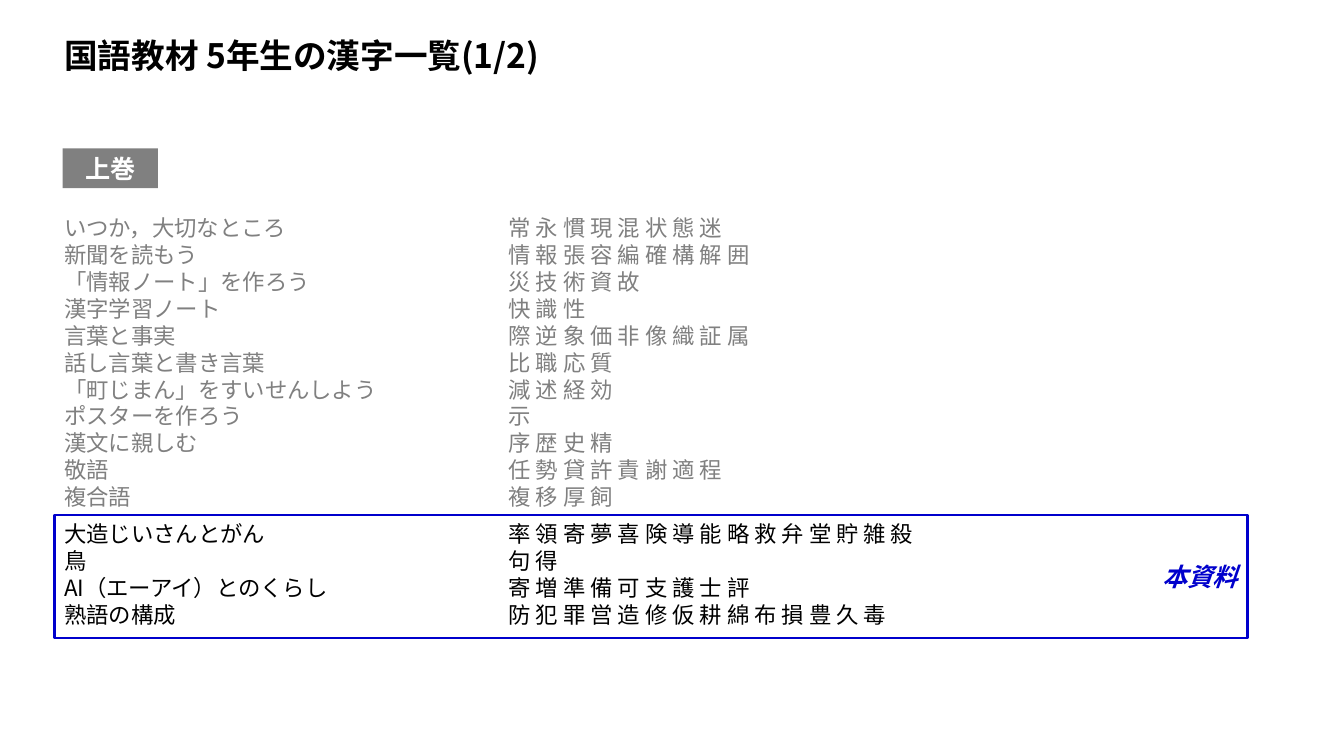
from lxml.etree import SubElement
from pptx import Presentation
from pptx.dml.color import RGBColor
from pptx.enum.shapes import MSO_SHAPE
from pptx.enum.text import MSO_ANCHOR, PP_ALIGN
from pptx.oxml.ns import qn
from pptx.util import Cm, Pt

GRAY = RGBColor(0x80, 0x80, 0x80)
BLACK = RGBColor(0, 0, 0)
WHITE = RGBColor(255, 255, 255)
BLUE = RGBColor(0, 0, 0xCC)

EARLIER_UNITS = [
    ("いつか，大切なところ", "常永慣現混状態迷"),
    ("新聞を読もう", "情報張容編確構解囲"),
    ("「情報ノート」を作ろう", "災技術資故"),
    ("漢字学習ノート", "快識性"),
    ("言葉と事実", "際逆象価非像織証属"),
    ("話し言葉と書き言葉", "比職応質"),
    ("「町じまん」をすいせんしよう", "減述経効"),
    ("ポスターを作ろう", "示"),
    ("漢文に親しむ", "序歴史精"),
    ("敬語", "任勢貸許責謝適程"),
    ("複合語", "複移厚飼"),
]
CURRENT_UNITS = [
    ("大造じいさんとがん", "率領寄夢喜険導能略救弁堂貯雑殺"),
    ("鳥", "句得"),
    ("AI（エーアイ）とのくらし", "寄増準備可支護士評"),
    ("熟語の構成", "防犯罪営造修仮耕綿布損豊久毒"),
]


def write_text(para, text, font="Noto Sans CJK JP", size=16, color=BLACK, bold=False,
               italic=False, align=PP_ALIGN.LEFT, before=0, tab=None):
    para.alignment = align
    para.line_spacing = Pt(size * 1.2)
    para.space_before = Pt(before)
    if tab:
        tab_list = SubElement(para._p.get_or_add_pPr(), qn("a:tabLst"))
        SubElement(tab_list, qn("a:tab"), pos=str(int(tab)), algn="l")
    span = para.add_run()
    span.text = text
    span.font.size = Pt(size)
    span.font.bold = bold
    span.font.italic = italic
    span.font.color.rgb = color
    span.font.name = font
    SubElement(span.font._element, qn("a:ea"), typeface=font)


class KanjiPage:
    """Holds the slide and its font, and adds each kind of element."""

    def __init__(self, deck, font):
        self.page = deck.slides.add_slide(deck.slide_layouts[6])
        self.font = font

    def text_box(self, left, top, width, height):
        box = self.page.shapes.add_textbox(Cm(left), Cm(top), Cm(width), Cm(height))
        box.text_frame.word_wrap = True
        return box.text_frame

    def title(self, text, *place):
        frame = self.text_box(*place)
        write_text(frame.paragraphs[0], text, font=self.font, size=24, bold=True)

    def unit_list(self, groups, *place, column):
        frame = self.text_box(*place)
        para = frame.paragraphs[0]
        for color, gap, units in groups:
            for index, (unit, kanji) in enumerate(units):
                write_text(para, f"{unit}\t{' '.join(kanji)}", font=self.font, color=color,
                           before=0 if index else gap, tab=Cm(column))
                if (unit, kanji) != groups[-1][2][-1]:
                    para = frame.add_paragraph()

    def rectangle(self, text, left, top, width, height, fill=None, line=None, **text_format):
        box = self.page.shapes.add_shape(
            MSO_SHAPE.RECTANGLE, Cm(left), Cm(top), Cm(width), Cm(height))
        box.shadow.inherit = False
        if fill is None:
            box.fill.background()
        else:
            box.fill.solid()
            box.fill.fore_color.rgb = fill
        if line is None:
            box.line.fill.background()
        else:
            box.line.color.rgb = line
            box.line.width = Pt(2)
        box.text_frame.vertical_anchor = MSO_ANCHOR.MIDDLE
        write_text(box.text_frame.paragraphs[0], text, font=self.font, size=18,
                   bold=True, **text_format)


def main():
    deck = Presentation()
    deck.slide_width, deck.slide_height = Cm(33.87), Cm(19.05)
    page = KanjiPage(deck, "Noto Sans CJK JP")
    page.unit_list([(GRAY, 0, EARLIER_UNITS), (BLACK, 7.2, CURRENT_UNITS)],
                   1.37, 5.28, 25.12, 11.2, column=11.2)
    page.title("国語教材 5年生の漢字一覧(1/2)", 1.37, 0.76, 24.6, 1.3)
    page.rectangle("上巻", 1.58, 3.74, 2.4, 1, fill=GRAY, color=WHITE,
                   align=PP_ALIGN.CENTER)
    page.rectangle("本資料", 1.37, 12.98, 30.07, 3.1, line=BLUE, color=BLUE,
                   italic=True, align=PP_ALIGN.RIGHT)
    deck.save("out.pptx")


if __name__ == "__main__":
    main()
